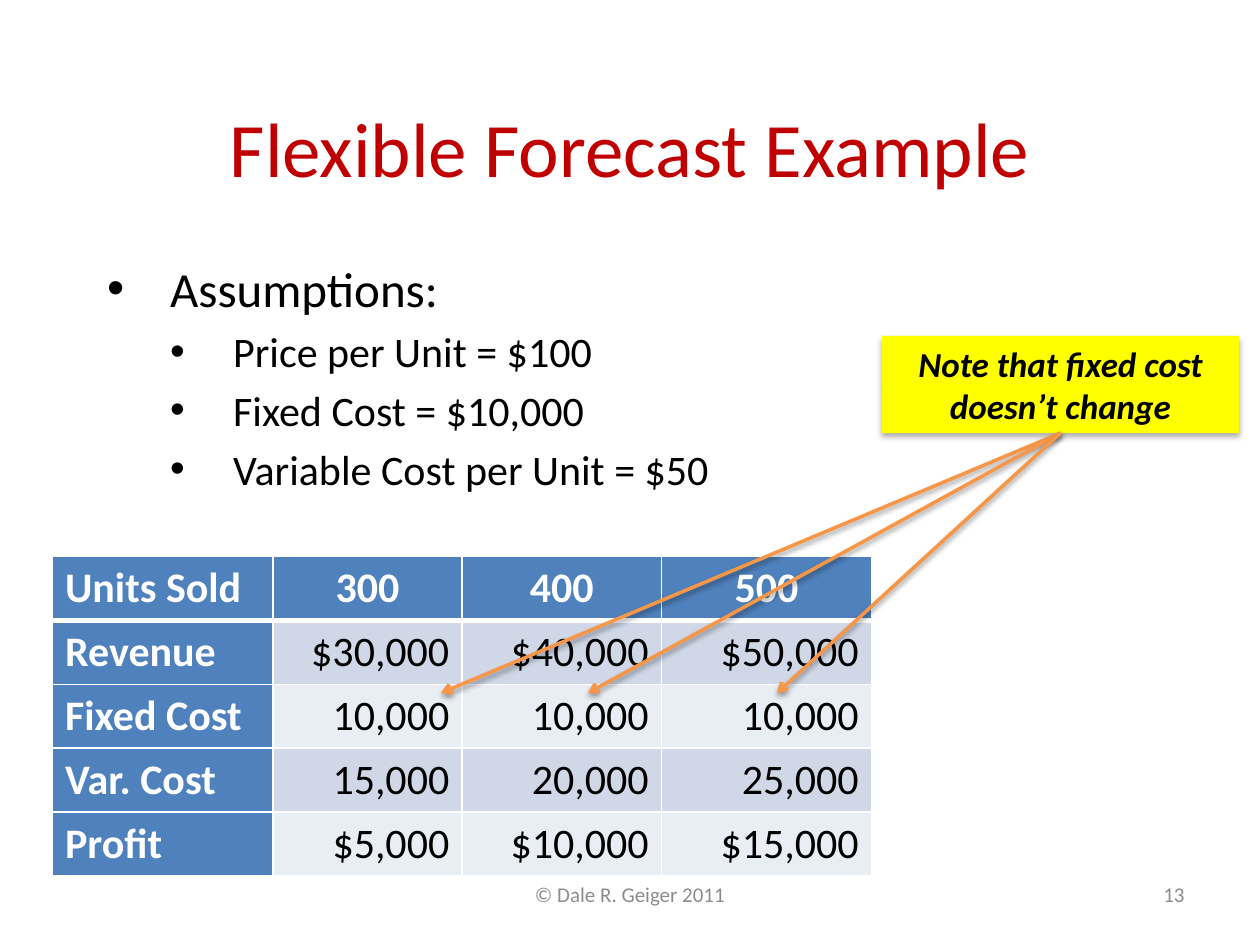
from dataclasses import dataclass

import pptx
import pptx.dml.color
import pptx.enum.shapes
import pptx.enum.text
import pptx.oxml
import pptx.oxml.ns
import pptx.util
from lxml import etree

FONT = "Calibri"
COLORS = {
    "title": "C00000", "text": "000000", "white": "FFFFFF", "header": "4F81BD",
    "band": "D0D8E8", "plain": "E9EDF4", "note": "FFFF00",
    "footer": "8C8C8C", "arrow": "F79646",
}
ALIGN = pptx.enum.text.PP_ALIGN
MIDDLE = pptx.enum.text.MSO_ANCHOR.MIDDLE
CELL = pptx.util.Inches(1) // 12  # grid of 120 columns by 90 rows


@dataclass(frozen=True)
class Box:
    col: float
    row: float
    cols: float
    rows: float

    def emu(self) -> tuple[int, ...]:
        return tuple(round(n * CELL) for n in (self.col, self.row, self.cols, self.rows))


@dataclass(frozen=True)
class Style:
    size: float
    color: str = "text"
    bold: bool = False
    italic: bool = False
    align: int = ALIGN.LEFT


@dataclass(frozen=True)
class Shadow:
    alpha: int
    blur: float
    distance: float


TITLE_BOX, BODY_BOX = Box(6, 5, 108, 18), Box(9, 24, 93, 26)
TABLE_BOX, NOTE_BOX = Box(5, 53, 78, 30), Box(84, 32, 34, 9.25)
FOOTERS = [
    (Box(41, 82, 38, 6.25), "© Dale R. Geiger 2011", ALIGN.CENTER),
    (Box(86, 82, 28, 6.25), "13", ALIGN.RIGHT),
]
ASSUMPTIONS = [
    (0, "Assumptions:"),
    (1, "Price per Unit = $100"),
    (1, "Fixed Cost = $10,000"),
    (1, "Variable Cost per Unit = $50"),
]
TABLE_COLS = [21, 18, 19, 20]
FORECAST = [
    ["Units Sold", "300", "400", "500"],
    ["Revenue", "$30,000", "$40,000", "$50,000"],
    ["Fixed Cost", "10,000", "10,000", "10,000"],
    ["Var. Cost", "15,000", "20,000", "25,000"],
    ["Profit", "$5,000", "$10,000", "$15,000"],
]
ARROW_TIPS = [(42, 66), (56, 66), (74, 66)]


def rgb(name: str) -> pptx.dml.color.RGBColor:
    return pptx.dml.color.RGBColor.from_string(COLORS[name])


def xml(markup: str) -> etree._Element:
    tag, rest = markup[:-2].split(" ", 1) if " " in markup[:-2] else (markup[:-2], "")
    return pptx.oxml.parse_xml(f"{tag} {pptx.oxml.ns.nsdecls('a')} {rest}/>")


def place(sp, box: Box) -> None:
    sp.left, sp.top, sp.width, sp.height = box.emu()


def write(p, text: str, style: Style) -> None:
    p.alignment = style.align
    r = p.add_run()
    r.text = text
    r.font.name, r.font.size = FONT, pptx.util.Pt(style.size)
    r.font.bold, r.font.italic = style.bold, style.italic
    r.font.color.rgb = rgb(style.color)


def add_shadow(sp, shadow: Shadow) -> None:
    effects = xml("<a:effectLst/>")
    outer = etree.SubElement(
        effects, pptx.oxml.ns.qn("a:outerShdw"),
        blurRad=str(pptx.util.Pt(shadow.blur)), dist=str(pptx.util.Pt(shadow.distance)),
        dir="5400000", rotWithShape="0")
    color = etree.SubElement(outer, pptx.oxml.ns.qn("a:srgbClr"), val=COLORS["text"])
    etree.SubElement(color, pptx.oxml.ns.qn("a:alpha"), val=str(shadow.alpha * 1000))
    sp._element.spPr.append(effects)


def add_bullet(p, level: int) -> None:
    p.level = level
    pPr = p._p.get_or_add_pPr()
    half = pptx.util.Inches(0.5)
    pPr.set("marL", str(half * (level + 1)))
    pPr.set("indent", str(-half))
    pPr.append(xml('<a:buFont typeface="Arial"/>'))
    pPr.append(xml('<a:buChar char="•"/>'))


def add_borders(cell, bottom: float) -> None:
    tcPr = cell._tc.get_or_add_tcPr()
    for side, width in (("L", 1), ("R", 1), ("T", 1), ("B", bottom)):
        ln = xml(f'<a:ln{side} w="{pptx.util.Pt(width)}"/>')
        fill = etree.SubElement(ln, pptx.oxml.ns.qn("a:solidFill"))
        etree.SubElement(fill, pptx.oxml.ns.qn("a:srgbClr"), val=COLORS["white"])
        tcPr.append(ln)


def add_forecast(s) -> None:
    table = s.shapes.add_table(len(FORECAST), len(TABLE_COLS), *TABLE_BOX.emu()).table
    for column, cols in zip(table.columns, TABLE_COLS):
        column.width = cols * CELL
    for i, values in enumerate(FORECAST):
        for j, text in enumerate(values):
            cell = table.cell(i, j)
            heading = i == 0 or j == 0
            align = ALIGN.LEFT if j == 0 else ALIGN.CENTER if i == 0 else ALIGN.RIGHT
            add_borders(cell, 3 if i == 0 else 1)
            cell.fill.solid()
            cell.fill.fore_color.rgb = rgb("header" if heading else "band" if i % 2 else "plain")
            write(cell.text_frame.paragraphs[0], text,
                  Style(24, "white" if heading else "text", bold=heading, align=align))


def add_note(s):
    sp = s.shapes.add_shape(pptx.enum.shapes.MSO_SHAPE.RECTANGLE, *NOTE_BOX.emu())
    sp.fill.solid()
    sp.fill.fore_color.rgb = rgb("note")
    sp.line.fill.background()
    add_shadow(sp, Shadow(32, 3.5, 2.2))
    tf = sp.text_frame
    tf.word_wrap = True
    write(tf.paragraphs[0], "Note that fixed cost doesn’t change",
          Style(20, bold=True, italic=True, align=ALIGN.CENTER))
    return sp


def add_arrow(s, note, tip: tuple[float, float]) -> None:
    x, y = (n * CELL for n in tip)
    line = s.shapes.add_connector(pptx.enum.shapes.MSO_CONNECTOR.STRAIGHT, 0, 0, x, y)
    line.begin_connect(note, 2)
    line.line.color.rgb = rgb("arrow")
    line.line.width = pptx.util.Pt(2)
    line.line._get_or_add_ln().append(xml('<a:tailEnd type="arrow"/>'))
    add_shadow(line, Shadow(38, 3.1, 1.6))


def main() -> None:
    prs = pptx.Presentation()
    prs.slide_width, prs.slide_height = 120 * CELL, 90 * CELL
    s = prs.slides.add_slide(prs.slide_layouts[1])

    # Title and assumptions
    title, body = s.placeholders
    place(title, TITLE_BOX)
    title.text_frame.vertical_anchor = MIDDLE
    write(title.text_frame.paragraphs[0], "Flexible Forecast Example",
          Style(44, "title", align=ALIGN.CENTER))
    place(body, BODY_BOX)
    tf = body.text_frame
    for i, (level, text) in enumerate(ASSUMPTIONS):
        p = tf.add_paragraph() if i else tf.paragraphs[0]
        add_bullet(p, level)
        write(p, text, Style(24 if level else 28))

    # Forecast table and note
    add_forecast(s)
    note = add_note(s)

    # Footer and slide number
    for box, text, align in FOOTERS:
        tf = s.shapes.add_textbox(*box.emu()).text_frame
        tf.word_wrap = True
        tf.vertical_anchor = MIDDLE
        write(tf.paragraphs[0], text, Style(12, "footer", align=align))

    # Arrows from the note to the fixed costs
    for tip in ARROW_TIPS:
        add_arrow(s, note, tip)

    prs.save("out.pptx")


if __name__ == "__main__":
    main()
